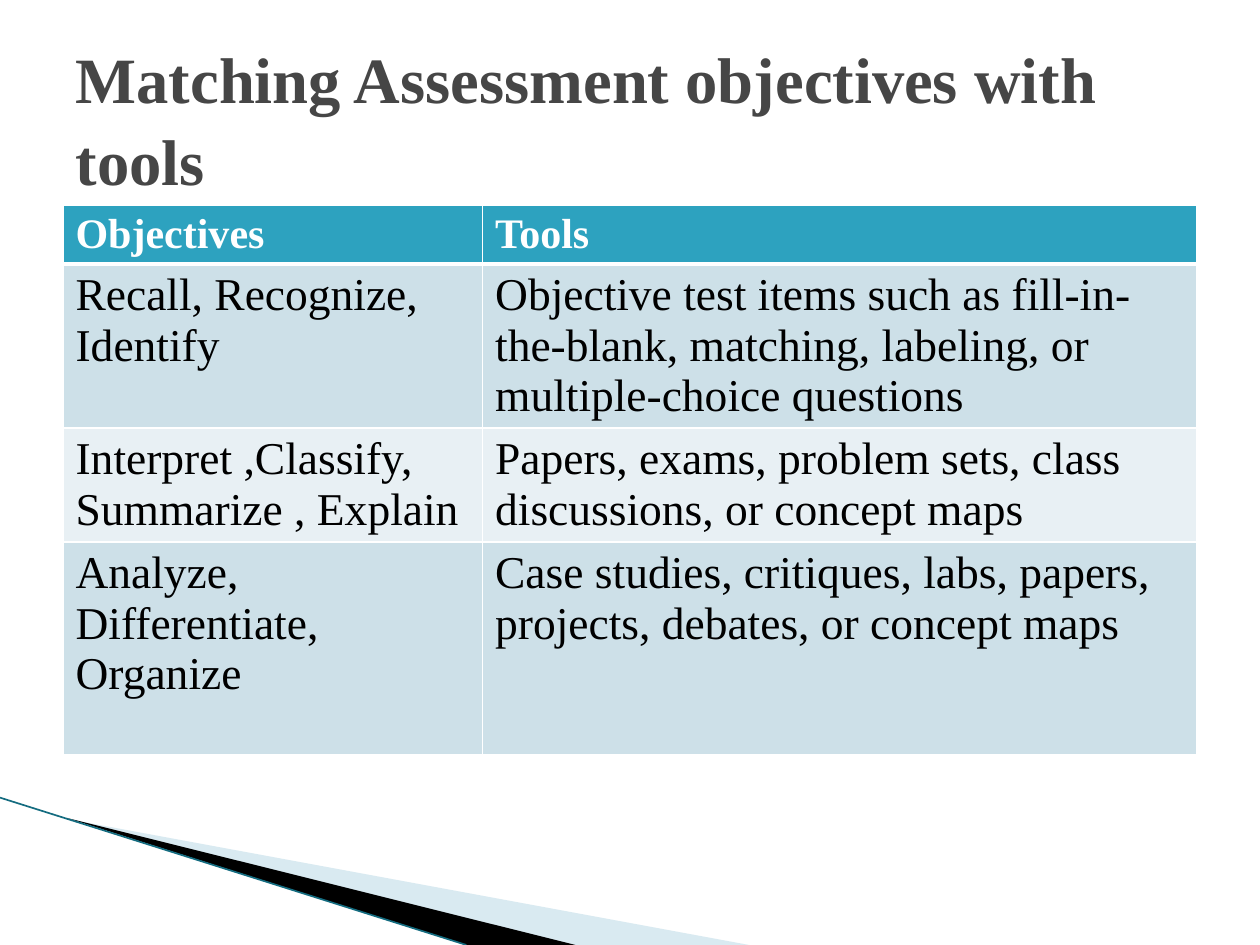
from collections import namedtuple
from dataclasses import dataclass

from lxml.etree import SubElement
from pptx import Presentation
from pptx.dml.color import RGBColor
from pptx.enum.text import MSO_ANCHOR, MSO_AUTO_SIZE, PP_ALIGN
from pptx.enum.shapes import MSO_CONNECTOR
from pptx.oxml.ns import qn
from pptx.util import Cm, Pt

Box = namedtuple("Box", "left top width height")


@dataclass(frozen=True)
class Theme:
    font: str = "Times New Roman"
    title: str = "464646"
    head: str = "2DA2BF"
    odd: str = "CDE0E8"
    even: str = "E8F0F4"
    white: str = "FFFFFF"
    black: str = "000000"
    pale: str = "A0CBDC"
    edge: str = "146C80"
    title_size: float = 36.9
    head_size: float = 24
    body_size: float = 26


THEME = Theme()
ROWS = [
    ("Objectives", "Tools"),
    ("Recall, Recognize, Identify",
     "Objective test items such as fill-in-the-blank, matching, labeling, or multiple-choice questions"),
    ("Interpret ,Classify, Summarize , Explain",
     "Papers, exams, problem sets, class discussions, or concept maps"),
    ("Analyze, Differentiate, Organize",
     "Case studies, critiques, labs, papers, projects, debates, or concept maps"),
]


def color(code):
    return RGBColor.from_string(code)


def write(frame, text, size, fill, bold=False, space=None):
    frame.text = text
    para = frame.paragraphs[0]
    para.alignment = PP_ALIGN.LEFT
    para.line_spacing = space
    font = para.runs[0].font
    font.name, font.size, font.bold = THEME.font, Pt(size), bold
    font.color.rgb = color(fill)


def border(cell, **sides):
    props = cell._tc.get_or_add_tcPr()
    for side, width in sides.items():
        line = SubElement(props, qn(f"a:ln{side}"), w=str(Pt(width)))
        paint = SubElement(line, qn("a:solidFill"))
        SubElement(paint, qn("a:srgbClr"), val=THEME.white)


def add_title(slide, box):
    title = slide.shapes.title
    title.left, title.top, title.width, title.height = map(Cm, box)
    frame = title.text_frame
    write(frame, "Matching Assessment objectives with tools",
          THEME.title_size, THEME.title, bold=True, space=1.06)
    frame.word_wrap = True
    frame.auto_size = MSO_AUTO_SIZE.NONE
    frame.vertical_anchor = MSO_ANCHOR.MIDDLE


def add_grid(slide, box):
    grid = slide.shapes.add_table(len(ROWS), 2, *map(Cm, box)).table
    for col, share in zip(grid.columns, (0.37, 0.63)):
        col.width = Cm(box.width * share)
    for row, high in zip(grid.rows, (1.17, 3.3, 2.3, 4.3)):
        row.height = Cm(high)
    for i, row in enumerate(ROWS):
        head = i == 0
        fill = THEME.head if head else THEME.odd if i % 2 else THEME.even
        for j, text in enumerate(row):
            cell = grid.cell(i, j)
            border(cell, L=1, R=1, T=3 if i == 1 else 1, B=3 if head else 1)
            cell.fill.solid()
            cell.fill.fore_color.rgb = color(fill)
            write(cell.text_frame, text,
                  THEME.head_size if head else THEME.body_size,
                  THEME.white if head else THEME.black, bold=head)


def add_wedge(slide, box, points, fill, alpha=100):
    spots = [(Cm(box.left + x), Cm(box.top + y)) for x, y in points]
    pen = slide.shapes.build_freeform(*spots[0])
    pen.add_line_segments(spots[1:], close=True)
    wedge = pen.convert_to_shape()
    wedge.shadow.inherit = False
    wedge.line.fill.background()
    wedge.fill.solid()
    wedge.fill.fore_color.rgb = color(fill)
    if alpha < 100:
        tint = wedge._element.spPr.find(".//" + qn("a:srgbClr"))
        SubElement(tint, qn("a:alpha"), val=str(alpha * 1000))


def add_decor(slide, box):
    base = box.height
    add_wedge(slide, box, [(1.4, 0.44), (box.width, base), (11.58, base)],
              THEME.pale, alpha=40)
    add_wedge(slide, box, [(1.35, 0.41), (11.6, base), (9.4, base)], THEME.black)
    edge = slide.shapes.add_connector(
        MSO_CONNECTOR.STRAIGHT, Cm(box.left), Cm(box.top),
        Cm(box.left + 9.4), Cm(box.top + base))
    edge.line.color.rgb = color(THEME.edge)
    edge.line.width = Pt(0.95)
    SubElement(edge._element.spPr, qn("a:effectLst"))


def main():
    deck = Presentation()
    deck.slide_width, deck.slide_height = Cm(25.4), Cm(19.05)
    slide = deck.slides.add_slide(deck.slide_layouts[5])
    add_decor(slide, Box(0, 16.08, 15.1, 2.97))
    add_grid(slide, Box(1.27, 4.13, 22.86, 11.07))
    add_title(slide, Box(1.27, 0.76, 22.86, 3.18))
    deck.save("out.pptx")


if __name__ == "__main__":
    main()
